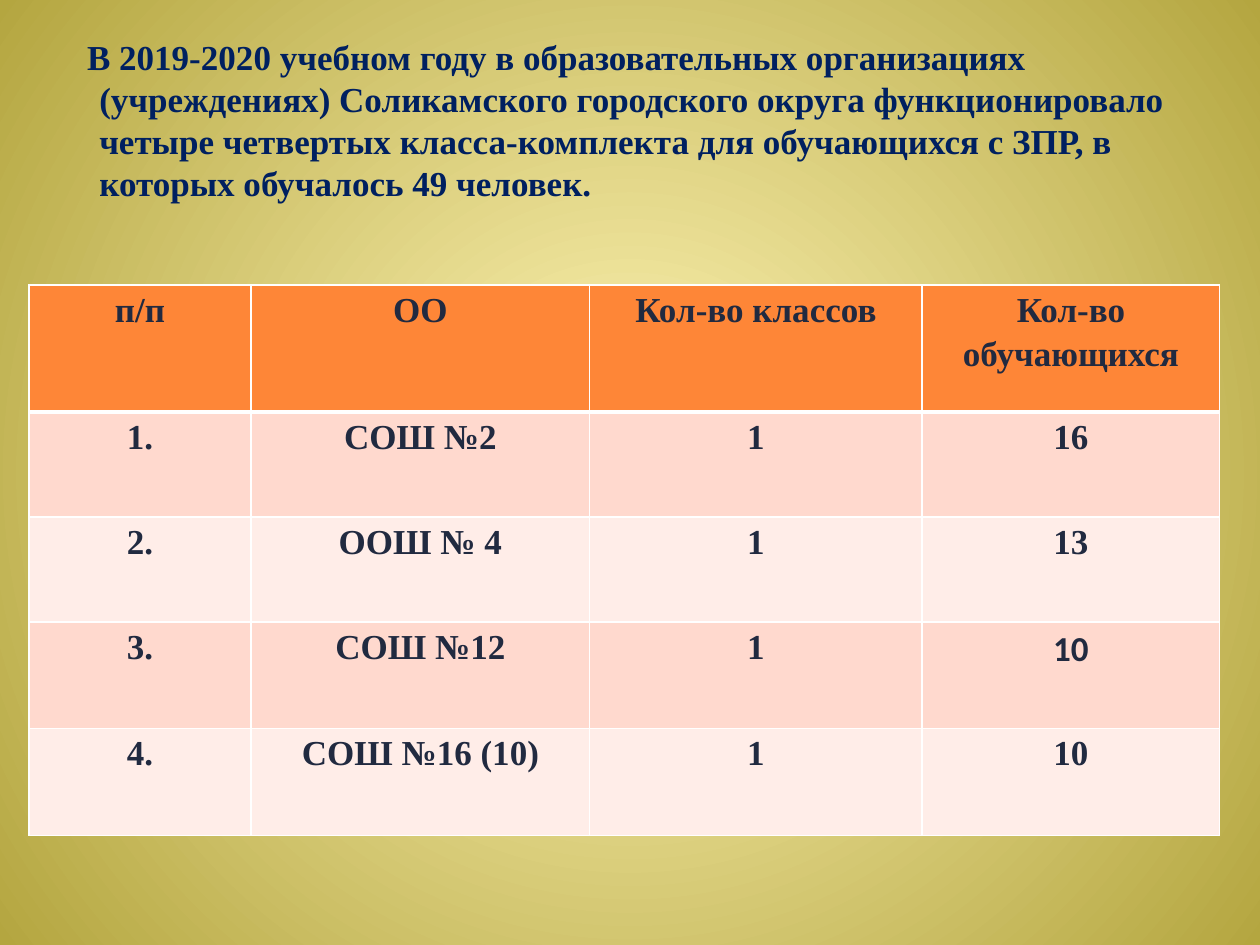
from lxml.etree import SubElement
from pptx import Presentation
from pptx.dml.color import RGBColor
from pptx.enum.text import PP_ALIGN
from pptx.oxml import parse_xml
from pptx.oxml.ns import nsdecls, qn
from pptx.util import Pt

COLORS = {
    "glow": "FFF5B6",
    "olive": "B4A640",
    "navy": "002060",
    "ink": "212A40",
    "header": "FE8637",
    "odd": "FFD9CE",
    "even": "FFEDE8",
    "border": "FFFFFF",
}
SERIF = "Times New Roman"
INTRO = (
    "В 2019-2020 учебном году в образовательных организациях (учреждениях) "
    "Соликамского городского округа функционировало четыре четвертых "
    "класса-комплекта для обучающихся с ЗПР, в которых обучалось 49 человек."
)
ROWS = [
    ["п/п", "ОО", "Кол-во классов", "Кол-во обучающихся"],
    ["1.", "СОШ №2", "1", "16"],
    ["2.", "ООШ № 4", "1", "13"],
    ["3.", "СОШ №12", "1", "10"],
    ["4.", "СОШ №16 (10)", "1", "10"],
]
FONT_OVERRIDES = {(3, 3): "Calibri"}
COLUMN_WIDTHS = [127, 193.5, 190, 170]
ROW_HEIGHTS = [72.5, 60, 60, 61, 61]


def rgb(name):
    return RGBColor.from_string(COLORS[name])


def set_values(target, values):
    for name, value in values.items():
        setattr(target, name, value)


def format_text(para, color, font=SERIF):
    set_values(para.font, {"name": font, "size": Pt(20), "bold": True})
    para.font.color.rgb = rgb(color)


def paint_background(page):
    fill = page.background.fill
    fill.gradient()
    for stop, name, position in zip(fill.gradient_stops, ("glow", "olive"), (0, 1)):
        stop.color.rgb = rgb(name)
        stop.position = position
    # Turn the linear gradient into a circular one
    linear = page.element.find(".//" + qn("a:lin"))
    linear.getparent().replace(linear, parse_xml(
        f'<a:path {nsdecls("a")} path="circle">'
        '<a:fillToRect l="50000" t="50000" r="50000" b="50000"/></a:path>'
    ))


def write_intro(page):
    box = page.placeholders[1]
    set_values(box, {"left": Pt(22.5), "top": Pt(16.5),
                     "width": Pt(664), "height": Pt(469.5)})
    box.text_frame.text = INTRO
    para = box.text_frame.paragraphs[0]
    properties = para._p.get_or_add_pPr()
    # Hanging indent without a bullet
    properties.set("marL", str(Pt(27)))
    properties.set("indent", str(Pt(-7)))
    SubElement(properties, qn("a:buNone"))
    set_values(para, {"space_before": Pt(0), "line_spacing": Pt(24)})
    format_text(para, "navy")


def add_borders(cell, widths):
    properties = cell._tc.get_or_add_tcPr()
    for position, (side, width) in enumerate(widths.items()):
        properties.insert(position, parse_xml(
            f'<a:ln{side} {nsdecls("a")} w="{Pt(width)}"><a:solidFill>'
            f'<a:srgbClr val="{COLORS["border"]}"/></a:solidFill></a:ln{side}>'
        ))


def fill_cell(cell, text, row, column):
    set_values(cell, {"text": text, "margin_left": Pt(5), "margin_right": Pt(5),
                      "margin_top": 0, "margin_bottom": 0})
    para = cell.text_frame.paragraphs[0]
    set_values(para, {"alignment": PP_ALIGN.CENTER, "line_spacing": 1.15})
    format_text(para, "ink", FONT_OVERRIDES.get((row, column), SERIF))
    cell.fill.solid()
    cell.fill.fore_color.rgb = rgb("header" if row == 0 else "odd" if row % 2 else "even")
    # The line under the header is thicker
    add_borders(cell, {"L": 1, "R": 1, "T": 3 if row == 1 else 1, "B": 3 if row == 0 else 1})


def add_class_table(page):
    frame = page.shapes.add_table(
        len(ROWS), len(COLUMN_WIDTHS), Pt(16.5), Pt(163),
        Pt(sum(COLUMN_WIDTHS)), Pt(sum(ROW_HEIGHTS)),
    )
    table = frame.table
    for column, width in zip(table.columns, COLUMN_WIDTHS):
        column.width = Pt(width)
    for row, height in zip(table.rows, ROW_HEIGHTS):
        row.height = Pt(height)
    for row, texts in enumerate(ROWS):
        for column, text in enumerate(texts):
            fill_cell(table.cell(row, column), text, row, column)


def main():
    deck = Presentation()
    set_values(deck, {"slide_width": Pt(720), "slide_height": Pt(540)})
    page = deck.slides.add_slide(deck.slide_layouts[1])
    # This slide has no title
    title = page.shapes.title.element
    title.getparent().remove(title)
    paint_background(page)
    write_intro(page)
    add_class_table(page)
    deck.save("out.pptx")


if __name__ == "__main__":
    main()
